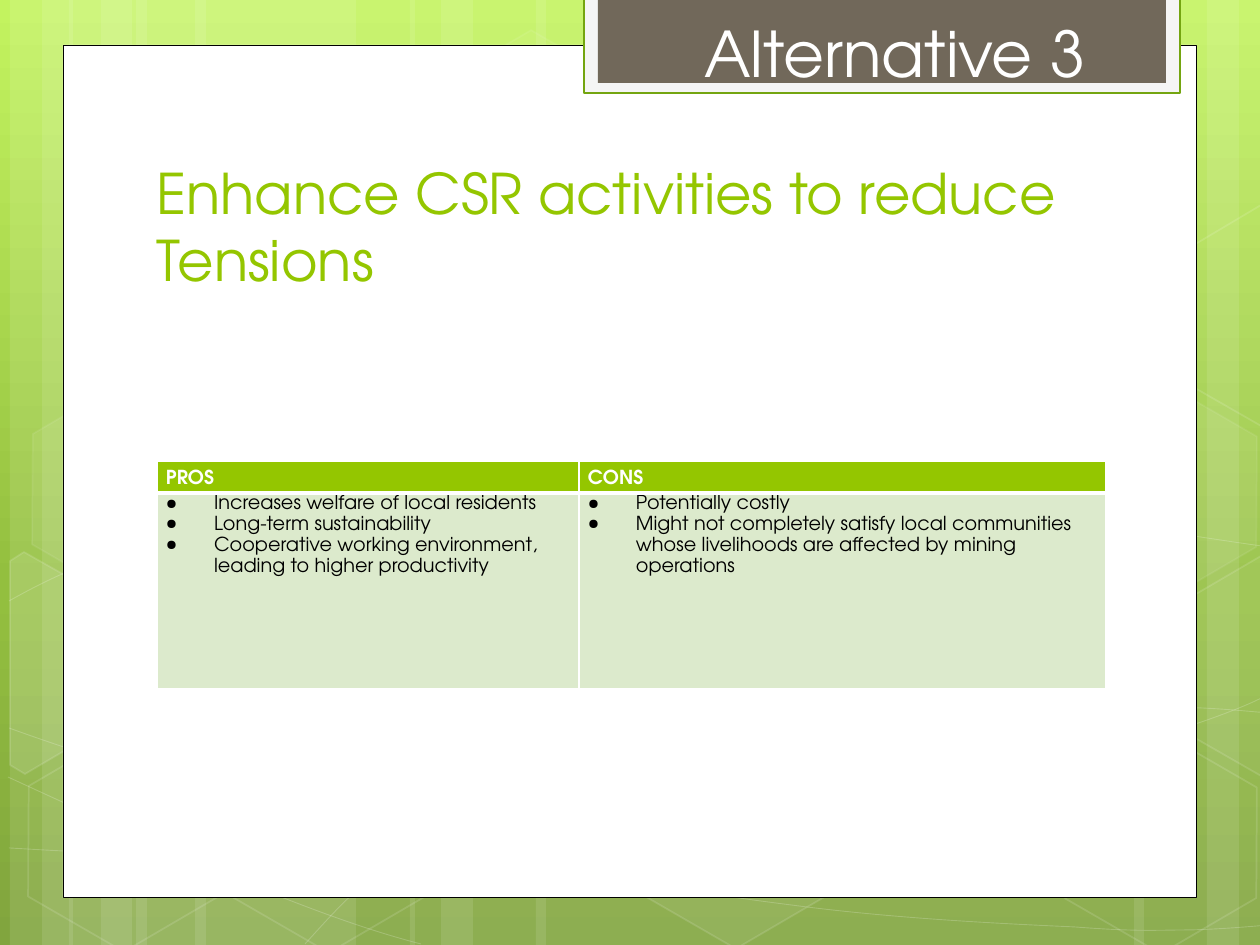
from copy import deepcopy
from lxml import etree
from pptx import Presentation
from pptx.dml.color import RGBColor
from pptx.enum.shapes import MSO_SHAPE
from pptx.enum.text import MSO_ANCHOR, MSO_AUTO_SIZE, PP_ALIGN
from pptx.oxml.ns import qn
from pptx.util import Pt

# Content
HEADING = "Enhance CSR activities to reduce Tensions"
TAB_LABEL = "Alternative 3"
COLUMNS = {
    "PROS": ["Increases welfare of local residents",
             "Long-term sustainability",
             "Cooperative working environment, leading to higher productivity"],
    "CONS": ["Potentially costly",
             "Might not completely satisfy local communities whose livelihoods "
             "are affected by mining operations"],
}

# Look
PX = 914400 / 126
FONT = "TeX Gyre Adventor"
COLORS = {"white": "FFFFFF", "black": "000000", "green": "94C600", "pale": "DCEACC",
          "frame": "F5F5F5", "outline": "74A510", "brown": "71685A"}
BACKDROP = [(0, "C3F35F"), (0.62, "93BF3F"), (1, "81A53E")]

# Backdrop decoration, in px
STRIPES = [(136, 220), (10, 63), (42, 105), (195, 220), (69, 63), (101, 105),
           (924, 220), (1207, 63), (1134, 105), (536, 388), (410, 63), (441, 105)]
# Each wave is a start point, then two handles and an end point per segment
WAVES = [
    [(9, 848), (77, 852), (145, 856), (239, 854), (334, 853), (451, 851), (577, 838),
     (703, 825), (882, 801), (998, 777), (1113, 753), (1231, 716), (1269, 694)],
    [(9, 601), (45, 581), (82, 562), (152, 543), (224, 524), (326, 496), (437, 488),
     (549, 479), (685, 478), (824, 488), (963, 498), (1193, 537), (1269, 547)],
    [(8, 777), (160, 847), (311, 916), (421, 944)],
    [(9, 728), (48, 742), (88, 756), (161, 776), (234, 795), (344, 827), (450, 848),
     (554, 869), (687, 892), (791, 905), (896, 919), (1008, 924), (1075, 927),
     (1140, 932), (1158, 930), (1191, 930), (1223, 929), (1246, 927), (1269, 925)],
    [(305, 944), (328, 919), (350, 893), (381, 871), (411, 848), (454, 823), (489, 805),
     (524, 788), (546, 780), (592, 767), (638, 754), (722, 737), (766, 728),
     (811, 719), (818, 719), (857, 717), (896, 714), (958, 709), (1000, 708),
     (1045, 707), (1116, 708), (1116, 708), (1116, 708), (1201, 708), (1201, 708),
     (1223, 709), (1245, 711), (1256, 712), (1268, 713), (1264, 712), (1268, 713)],
]
# left, top, fill opacity %, line opacity %
HEXAGONS = [(421, 45, 4, 8), (626, 742, 6, 12), (14, 745, 0, 12), (18, 393, 7, 8),
            (219, 746, 0, 12), (949, 571, 10, 12), (1051, 747, 0, 12), (1051, 396, 7, 8)]
# outline, fill opacity %, line opacity %
CUT_HEXAGONS = [
    ([(10, 561), (24, 552), (121, 607), (120, 718), (25, 774), (10, 765)], 10, 12),
    ([(1167, 611), (1261, 556), (1271, 562), (1271, 772), (1263, 777), (1167, 722)], 4, 12),
    ([(1167, 261), (1261, 205), (1273, 212), (1271, 422), (1263, 427), (1167, 372)], 0, 12),
]
# left, top, width, height, fill, line, line width
PANELS = [(63, 45, 1134, 853, "white", "black", 0.5),
          (584, -3, 596, 96, "frame", "outline", 1.25),
          (598, -3, 568, 86, "brown", None, 0)]
TITLE_BOX = (144, 141, 968, 158)
LABEL_BOX = (692, 8, 415, 89)
TABLE_LEFT, TABLE_TOP = 157, 461
COLUMN_WIDTHS, ROW_HEIGHTS = (422, 527), (32, 196)
CELL_INSET, BULLET_INDENT = 9, 48


def emu(*lengths):
    return [round(length * PX) for length in lengths]


def rgb(name):
    return RGBColor.from_string(COLORS[name])


def paint(fill, color, opacity=100):
    """Fill with a colour at an opacity in percent; zero means no fill."""
    if not opacity:
        fill.background()
        return
    fill.solid()
    fill.fore_color.rgb = rgb(color)
    if opacity < 100:
        choice = fill._xPr.find(qn("a:solidFill"))[0]
        etree.SubElement(choice, qn("a:alpha"), val=str(opacity * 1000))


def style(shape, color, opacity=100, line=None, width=0, line_opacity=100):
    shape.shadow.inherit = False
    paint(shape.fill, color, opacity)
    if line:
        shape.line.width = Pt(width)
        paint(shape.line.fill, line, line_opacity)
    else:
        shape.line.fill.background()


def write(paragraph, text, size, color, bold=False):
    run = paragraph.add_run()
    run.text = text
    run.font.name, run.font.size, run.font.bold = FONT, Pt(size), bold
    run.font.color.rgb = rgb(color)


def outline(shapes, points, close):
    builder = shapes.build_freeform(*points[0], scale=PX)
    builder.add_line_segments(points[1:], close=close)
    return builder.convert_to_shape()


def curve(shapes, points):
    """Freeform whose points, after the first, are taken by threes as cubic segments."""
    shape = outline(shapes, points, False)
    segments = list(shape._element.iter(qn("a:lnTo")))
    for i in range(0, len(segments), 3):
        cubic = etree.Element(qn("a:cubicBezTo"))
        segments[i].addprevious(cubic)
        for segment in segments[i:i + 3]:
            cubic.append(segment[0])
            segment.getparent().remove(segment)
    return shape


def border(cell, **widths):
    """White borders, given by side (L, R, T, B) in points."""
    properties = cell._tc.get_or_add_tcPr()
    for position, (side, width) in enumerate(widths.items()):
        line = etree.Element(qn(f"a:ln{side}"), w=str(Pt(width)))
        solid = etree.SubElement(line, qn("a:solidFill"))
        etree.SubElement(solid, qn("a:srgbClr"), val=COLORS["white"])
        properties.insert(position, line)


def bullet(paragraph):
    indent = emu(BULLET_INDENT)[0]
    properties = paragraph._p.get_or_add_pPr()
    properties.set("marL", str(indent))
    properties.set("indent", str(-indent))
    etree.SubElement(properties, qn("a:buSzPct"), val="75000")
    etree.SubElement(properties, qn("a:buChar"), char="●")


presentation = Presentation()
presentation.slide_width, presentation.slide_height = emu(1260, 945)
slide = presentation.slides.add_slide(presentation.slide_layouts[5])
shapes = slide.shapes

# Backdrop gradient
backdrop = slide.background.fill
backdrop.gradient()
backdrop.gradient_angle = 270
first_stop = backdrop.gradient_stops._gsLst[0]
first_stop.addnext(deepcopy(first_stop))
for stop, (position, color) in zip(backdrop.gradient_stops, BACKDROP):
    stop.position = position
    stop.color.rgb = RGBColor.from_string(color)

# Stripes, waves and hexagons
for left, width in STRIPES:
    style(shapes.add_shape(MSO_SHAPE.RECTANGLE, *emu(left, 0, width, 945)), "white", 10)
for wave in WAVES:
    style(curve(shapes, wave), "white", 0, "white", 0.5, 20)
for left, top, opacity, line_opacity in HEXAGONS:
    hexagon = shapes.add_shape(MSO_SHAPE.HEXAGON, *emu(left, top, 220, 192))
    hexagon.adjustments[0], hexagon.adjustments[1] = 0.285, 1.155
    hexagon.rotation = 30
    style(hexagon, "white", opacity, "white", 1, line_opacity)
for points, opacity, line_opacity in CUT_HEXAGONS:
    style(outline(shapes, points, True), "white", opacity, "white", 1, line_opacity)

# Page panel and tab
for *box, color, line, width in PANELS:
    style(shapes.add_shape(MSO_SHAPE.RECTANGLE, *emu(*box)), color, 100, line, width)

# Title, brought in front of the panel
title = shapes.title
shapes._spTree.append(title._element)
title.left, title.top, title.width, title.height = emu(*TITLE_BOX)
title.text_frame.vertical_anchor = MSO_ANCHOR.BOTTOM
title.text_frame.auto_size = MSO_AUTO_SIZE.NONE
heading = title.text_frame.paragraphs[0]
heading.alignment = PP_ALIGN.LEFT
write(heading, HEADING, 32, "green")

# Pros and cons table
table = shapes.add_table(2, 2, *emu(TABLE_LEFT, TABLE_TOP, sum(COLUMN_WIDTHS),
                                    sum(ROW_HEIGHTS))).table
for row, height in zip(table.rows, emu(*ROW_HEIGHTS)):
    row.height = height
for c, (header, points) in enumerate(COLUMNS.items()):
    table.columns[c].width = emu(COLUMN_WIDTHS[c])[0]
    for r, (lines, fill) in enumerate([([header], "green"), (points, "pale")]):
        cell = table.cell(r, c)
        cell.margin_left = cell.margin_right = emu(CELL_INSET)[0]
        cell.margin_top = cell.margin_bottom = 0
        paint(cell.fill, fill)
        border(cell, L=1, R=1, T=1 if r == 0 else 3, B=3 if r == 0 else 1)
        for i, text in enumerate(lines):
            frame = cell.text_frame
            paragraph = frame.add_paragraph() if i else frame.paragraphs[0]
            paragraph.line_spacing = 1.15 if r else 1.5
            if r:
                bullet(paragraph)
            write(paragraph, text, 11, "black" if r else "white", bold=r == 0)

# Tab label
label = shapes.add_textbox(*emu(*LABEL_BOX)).text_frame
label.word_wrap = False
label.auto_size = MSO_AUTO_SIZE.SHAPE_TO_FIT_TEXT
write(label.paragraphs[0], TAB_LABEL, 36, "white")
presentation.save("out.pptx")
